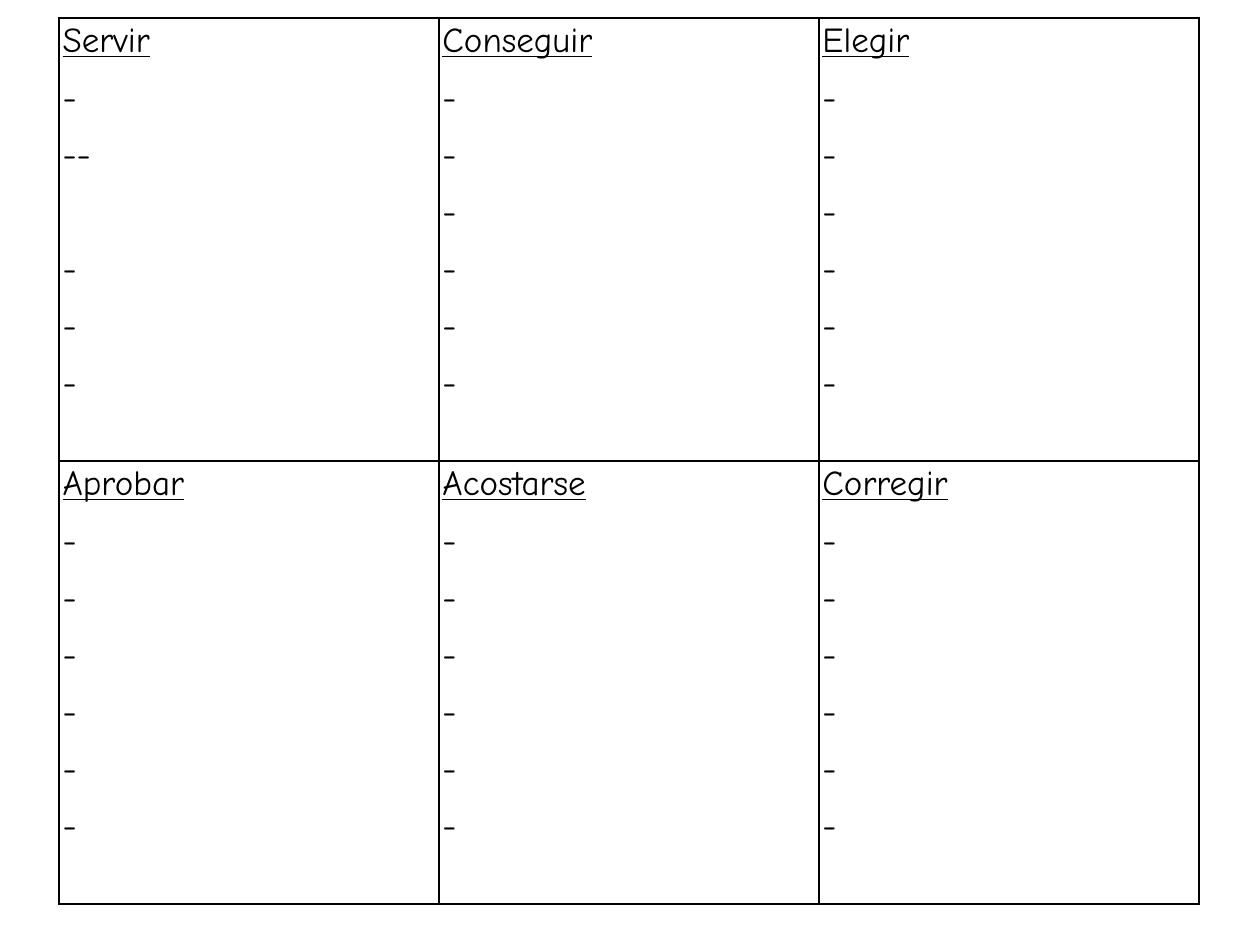
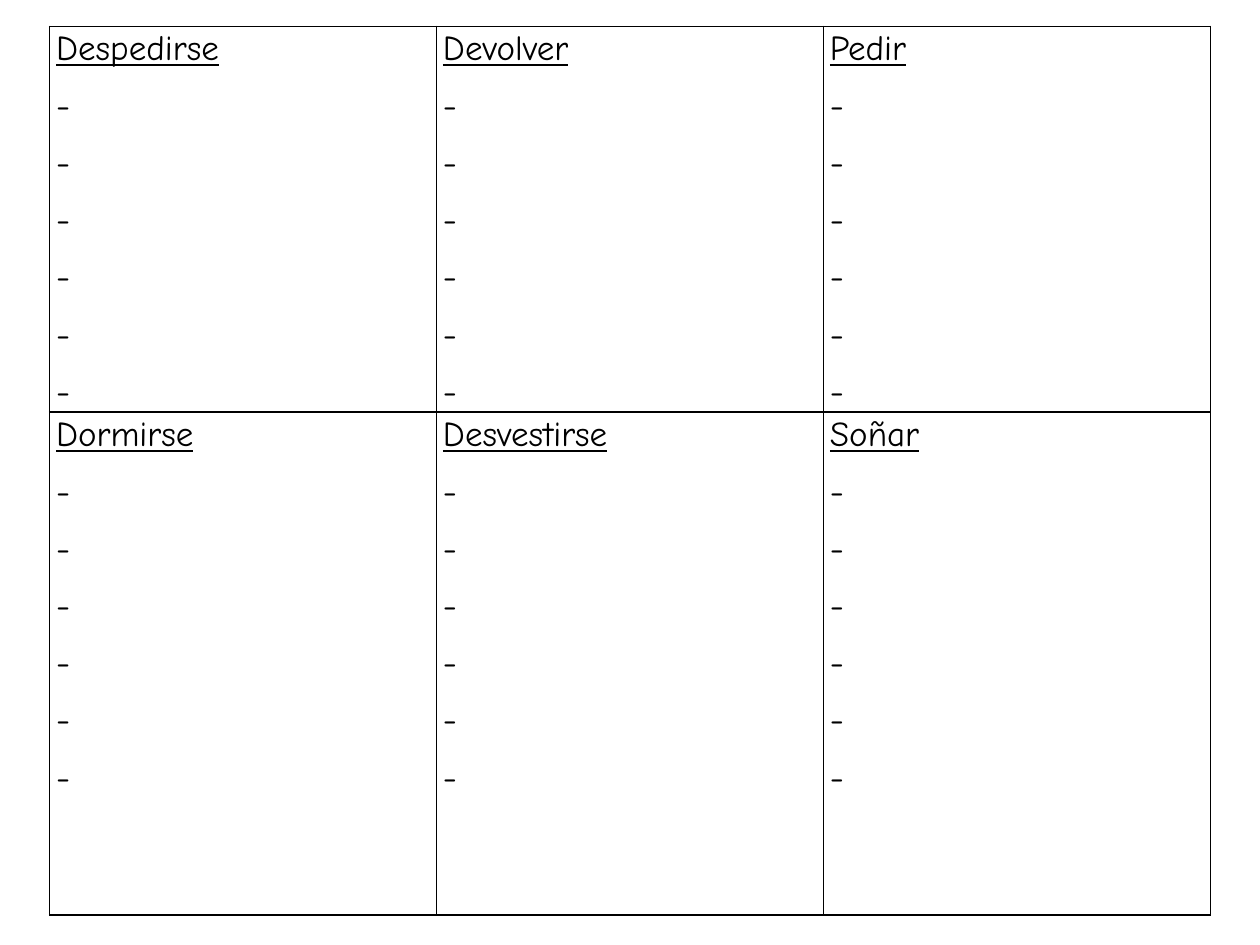
"""Build two pages of Spanish verb grids with dashes to fill in."""
from dataclasses import dataclass
from itertools import product

from lxml.etree import SubElement
from pptx import Presentation
from pptx.dml.color import RGBColor
from pptx.oxml.ns import qn
from pptx.util import Cm, Pt


@dataclass(frozen=True)
class Theme:
    font: str = "Comic Neue"
    ink: str = "000000"
    text_size: float = 20
    line_spacing: float = 1.07
    space_after: float = 8
    wide_gap: float = 40.6
    border: float = 1


@dataclass(frozen=True)
class Verb:
    name: str
    marks: tuple[str, ...] = ("-",) * 6
    gap_after: str = ""


@dataclass(frozen=True)
class VerbGrid:
    left: float
    top: float
    column_width: float
    row_heights: tuple[float, ...]
    side_margin: float
    rows: tuple[tuple[Verb, ...], ...]


THEME = Theme()

GRIDS = (
    VerbGrid(1.19, 0.36, 7.66, (8.93, 8.93), 0.07, (
        (Verb("Servir", ("-", "--", "-", "-", "-"), gap_after="--"),
         Verb("Conseguir"), Verb("Elegir")),
        (Verb("Aprobar"), Verb("Acostarse"), Verb("Corregir")),
    )),
    VerbGrid(1, 0.53, 7.8, (7.78, 10.14), 0.13, (
        (Verb("Despedirse"), Verb("Devolver"), Verb("Pedir")),
        (Verb("Dormirse"), Verb("Desvestirse"), Verb("Soñar")),
    )),
)


def write(para, text: str, *, underline: bool = False,
          space_after: float = THEME.space_after) -> None:
    para.line_spacing = THEME.line_spacing
    para.space_after = Pt(space_after)
    span = para.add_run()
    span.text = text
    span.font.name = THEME.font
    span.font.size = Pt(THEME.text_size)
    span.font.color.rgb = RGBColor.from_string(THEME.ink)
    span.font.underline = underline


def draw_borders(cell) -> None:
    properties = cell._tc.get_or_add_tcPr()
    for index, side in enumerate(("a:lnL", "a:lnR", "a:lnT", "a:lnB")):
        line = SubElement(properties, qn(side), w=str(Pt(THEME.border)))
        fill = SubElement(line, qn("a:solidFill"))
        SubElement(fill, qn("a:srgbClr"), val=THEME.ink)
        properties.insert(index, line)


def fill_cell(cell, verb: Verb, side_margin: float) -> None:
    cell.fill.background()
    draw_borders(cell)
    cell.margin_left = cell.margin_right = Cm(side_margin)
    cell.margin_top = cell.margin_bottom = Cm(0)
    frame = cell.text_frame
    write(frame.paragraphs[0], verb.name, underline=True)
    for mark in verb.marks:
        gap = THEME.wide_gap if mark == verb.gap_after else THEME.space_after
        write(frame.add_paragraph(), mark, space_after=gap)


def draw_grid(page, grid: VerbGrid) -> None:
    row_count, column_count = len(grid.rows), len(grid.rows[0])
    table = page.shapes.add_table(
        row_count, column_count, Cm(grid.left), Cm(grid.top),
        Cm(grid.column_width * column_count), Cm(sum(grid.row_heights))).table
    table.first_row = table.horz_banding = False
    for column in table.columns:
        column.width = Cm(grid.column_width)
    for row, height in zip(table.rows, grid.row_heights):
        row.height = Cm(height)
    for row, column in product(range(row_count), range(column_count)):
        fill_cell(table.cell(row, column), grid.rows[row][column], grid.side_margin)


def main() -> None:
    deck = Presentation()
    deck.slide_width, deck.slide_height = Cm(25.4), Cm(19.05)
    for grid in GRIDS:
        draw_grid(deck.slides.add_slide(deck.slide_layouts[6]), grid)
    deck.save("out.pptx")


if __name__ == "__main__":
    main()
